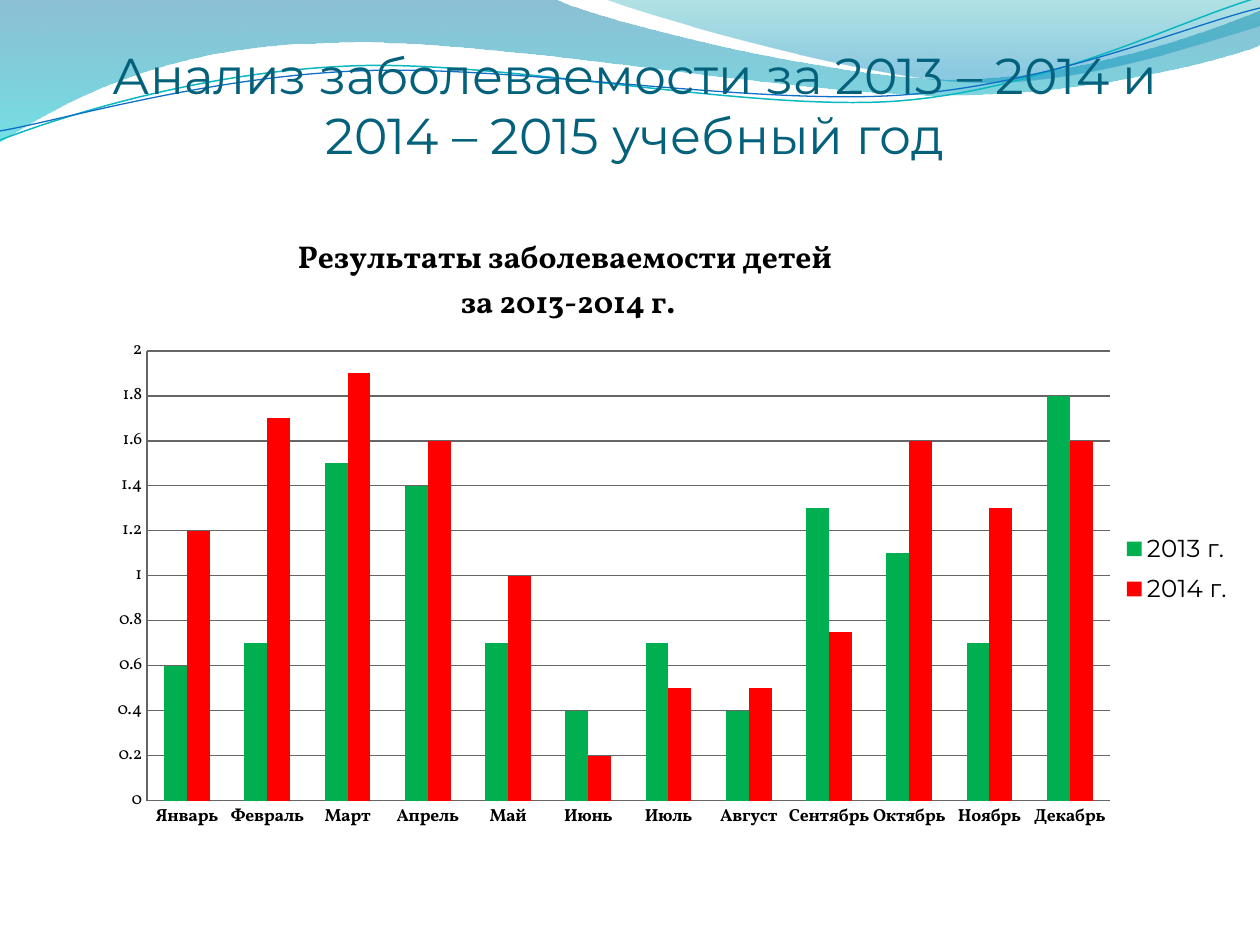
from lxml import etree
from pptx import Presentation
from pptx.chart.data import CategoryChartData
from pptx.dml.color import RGBColor
from pptx.enum.chart import XL_CHART_TYPE, XL_LEGEND_POSITION, XL_TICK_MARK
from pptx.enum.text import MSO_ANCHOR, PP_ALIGN
from pptx.oxml.ns import qn
from pptx.util import Emu, Pt

COLUMNS = XL_CHART_TYPE.COLUMN_CLUSTERED
LEGEND_RIGHT = XL_LEGEND_POSITION.RIGHT
NO_TICK = XL_TICK_MARK.NONE
CENTER = PP_ALIGN.CENTER
BOTTOM = MSO_ANCHOR.BOTTOM

SCALE = 914400 / 126
HEAD_FONT = "Montserrat"
CHART_FONT = "Vollkorn"
COLORS = {
    "title": "04617B", "text": "000000", "grid": "666666",
    "deep": "0074A1", "cyan": "00C6CF", "teal": "00A1A9", "sky": "008BBF",
    "teal_line": "0AB8BF", "blue_line": "0F6FC6",
    "green": "00B050", "red": "FF0000",
}
CHART_BOX = (95, 204, 1165, 638)

WAVE_FILLS = [
    ([(-1, -1), (554, -1), (600, 21, 837, 79, 955, 79),
      (1074, 79, 1207, 33, 1260, 11), (1261, 45),
      (1239, 55, 1096, 96, 940, 95), (784, 95, 481, 35, 324, 43),
      (163, 45, 58, 105, -1, 142), (-1, -1)],
     [(0, "deep", 45), (1, "cyan", 55)]),
    ([(604, -1), (641, 14, 859, 78, 969, 82),
      (1079, 87, 1211, 40, 1260, 26), (1260, -1), (604, -1)],
     [(0, "teal", 30), (0.8, "sky", 45)]),
]
WAVE_LINES = [
    ([(0, 140), (60, 117, 199, 72, 349, 66),
      (498, 59, 747, 112, 898, 101), (1050, 89, 1182, 19, 1260, -3)],
     "teal_line", 0.85),
    ([(0, 131), (59, 121, 207, 77, 357, 71),
      (508, 64, 752, 106, 903, 95), (1053, 84, 1186, 26, 1260, 8)],
     "blue_line", 0.75),
]

MONTHS = ["Январь", "Февраль", "Март", "Апрель", "Май", "Июнь", "Июль",
          "Август", "Сентябрь", "Октябрь", "Ноябрь", "Декабрь"]
SERIES = [
    ("2013 г.", "green",
     [0.6, 0.7, 1.5, 1.4, 0.7, 0.4, 0.7, 0.4, 1.3, 1.1, 0.7, 1.8]),
    ("2014 г.", "red",
     [1.2, 1.7, 1.9, 1.6, 1, 0.2, 0.5, 0.5, 0.75, 1.6, 1.3, 1.6]),
]


def px(n):
    return Emu(round(n * SCALE))


def rgb(name):
    return RGBColor.from_string(COLORS[name])


def set_font(font, size, name, color="text", bold=False):
    font.size = Pt(size)
    font.name = name
    font.bold = bold
    font.color.rgb = rgb(color)


def bend(sp, segments):
    steps = iter(list(sp._element.iter(qn("a:lnTo"))))
    for segment in segments:
        first, *others = [next(steps) for _ in range(len(segment) // 2)]
        if others:
            curve = etree.Element(qn("a:cubicBezTo"))
            first.addprevious(curve)
            for step in (first, *others):
                curve.append(step[0])
                step.getparent().remove(step)


def add_wave(s, path, close):
    start, *segments = path
    points = [(px(x), px(y)) for segment in segments
              for x, y in zip(segment[0::2], segment[1::2])]
    builder = s.shapes.build_freeform(*map(px, start))
    builder.add_line_segments(points, close=close)
    sp = builder.convert_to_shape()
    bend(sp, segments)
    sp.shadow.inherit = False
    return sp


def add_filled_wave(s, path, stops):
    sp = add_wave(s, path, True)
    sp.line.fill.background()
    sp.fill.gradient()
    sp.fill.gradient_angle = 270
    for stop, (position, color, _) in zip(sp.fill.gradient_stops, stops):
        stop.position = position
        stop.color.rgb = rgb(color)
    for clr, (_, _, opacity) in zip(sp._element.iter(qn("a:srgbClr")), stops):
        etree.SubElement(clr, qn("a:alpha"), val=str(opacity * 1000))


def add_line_wave(s, path, color, width):
    sp = add_wave(s, path, False)
    sp.fill.background()
    sp.line.color.rgb = rgb(color)
    sp.line.width = Pt(width)


def format_title(s, text):
    sp = s.shapes.title
    s.shapes._spTree.append(sp._element)
    sp.left, sp.top, sp.width, sp.height = map(px, (63, 37, 1144, 128))
    tf = sp.text_frame
    tf.text = text
    tf.word_wrap = True
    tf.vertical_anchor = BOTTOM
    tf.margin_left = tf.margin_right = tf.margin_bottom = 0
    tf.margin_top = px(6)
    p = tf.paragraphs[0]
    p.alignment = CENTER
    set_font(p.font, 28.8, HEAD_FONT, "title")


def place(element, index, left, top, width=None, height=None, inner=False):
    for old in element.findall(qn("c:layout")):
        element.remove(old)
    layout = etree.Element(qn("c:layout"))
    manual = etree.SubElement(layout, qn("c:manualLayout"))
    if inner:
        etree.SubElement(manual, qn("c:layoutTarget"), val="inner")
    for key in ("xMode", "yMode"):
        etree.SubElement(manual, qn("c:" + key), val="edge")
    x, y, w, h = CHART_BOX
    fractions = {"x": (left - x) / w, "y": (top - y) / h}
    if width:
        fractions.update(w=width / w, h=height / h)
    for key, value in fractions.items():
        etree.SubElement(manual, qn("c:" + key), val=f"{value:.4f}")
    element.insert(index, layout)


def format_axis(axis, bold):
    axis.major_tick_mark = axis.minor_tick_mark = NO_TICK
    axis.format.line.color.rgb = rgb("grid")
    axis.format.line.width = Pt(0.75)
    set_font(axis.tick_labels.font, 10, CHART_FONT, bold=bold)


def format_chart_title(chart, lines):
    tf = chart.chart_title.text_frame
    tf.text = "\n".join(lines)
    for p in tf.paragraphs:
        p.alignment = CENTER
        set_font(p.font, 18, CHART_FONT, bold=True)


def add_chart(s):
    data = CategoryChartData()
    data.categories = MONTHS
    for name, _, values in SERIES:
        data.add_series(name, values)
    chart = s.shapes.add_chart(COLUMNS, *map(px, CHART_BOX), data).chart
    set_font(chart.font, 10, CHART_FONT)
    format_chart_title(
        chart, ["Результаты заболеваемости детей ", "за 2013-2014 г."])

    plot = chart.plots[0]
    plot.vary_by_categories = False
    plot.gap_width = 150
    plot.overlap = 0
    for series, (_, color, _) in zip(plot.series, SERIES):
        series.format.fill.solid()
        series.format.fill.fore_color.rgb = rgb(color)

    format_axis(chart.category_axis, True)
    axis = chart.value_axis
    format_axis(axis, False)
    axis.minimum_scale, axis.maximum_scale, axis.major_unit = 0, 2, 0.2
    axis.tick_labels.number_format = "General"
    axis.tick_labels.number_format_is_linked = False
    axis.major_gridlines.format.line.color.rgb = rgb("grid")
    axis.major_gridlines.format.line.width = Pt(0.75)

    chart.has_legend = True
    chart.legend.position = LEGEND_RIGHT
    chart.legend.include_in_layout = False
    set_font(chart.legend.font, 14, HEAD_FONT)

    root = chart._chartSpace.chart
    place(root.find(qn("c:plotArea")), 0, 147, 351, 963, 450, inner=True)
    place(root.find(qn("c:title")), 1, 294, 232)
    place(root.find(qn("c:legend")), 1, 1118, 524, 118, 90)


def main():
    prs = Presentation()
    prs.slide_width, prs.slide_height = px(1260), px(945)
    s = prs.slides.add_slide(prs.slide_layouts[5])
    for path, stops in WAVE_FILLS:
        add_filled_wave(s, path, stops)
    for path, color, width in WAVE_LINES:
        add_line_wave(s, path, color, width)
    format_title(s, "Анализ заболеваемости за 2013 – 2014 и 2014 – 2015 учебный год")
    add_chart(s)
    prs.save("out.pptx")


if __name__ == "__main__":
    main()
